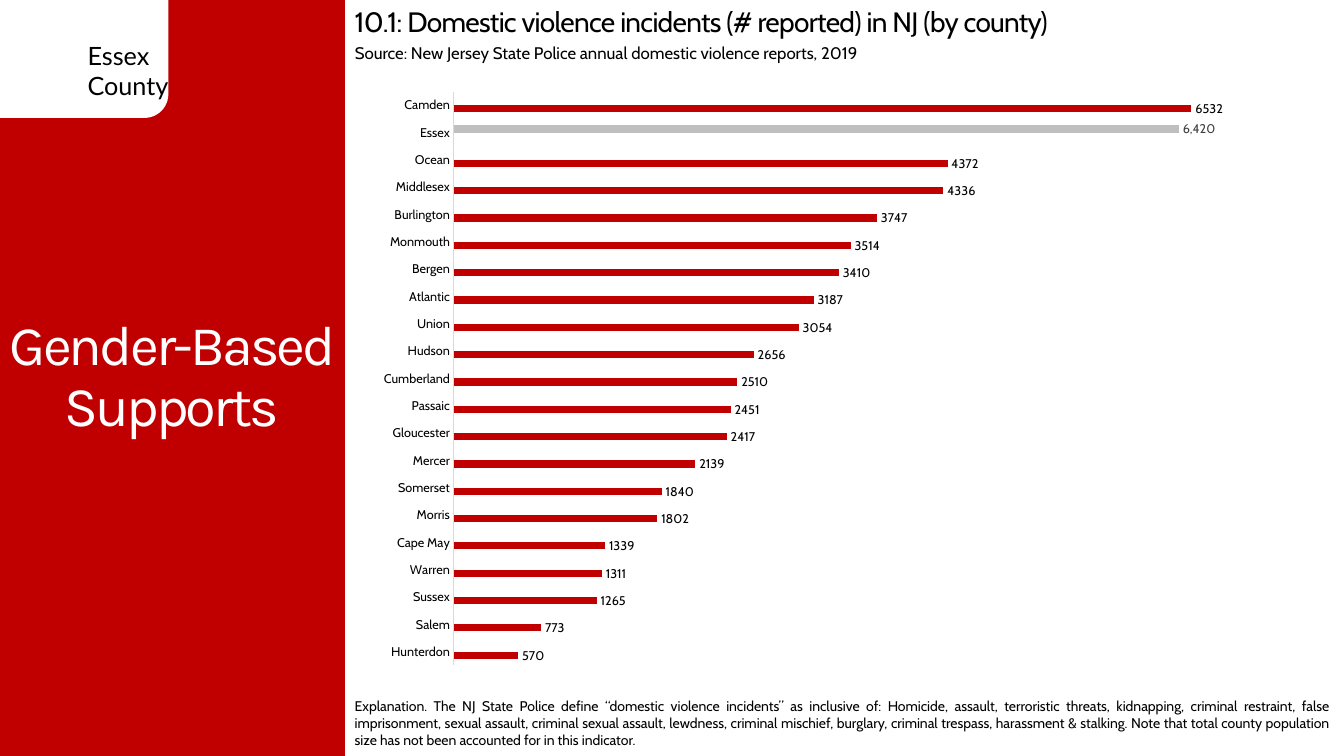
"""Build the Essex County slide on domestic violence incidents by county."""
from dataclasses import dataclass

from lxml import etree
from pptx import Presentation
from pptx.chart.data import CategoryChartData
from pptx.dml.color import RGBColor
from pptx.enum.chart import XL_CHART_TYPE, XL_LABEL_POSITION, XL_TICK_MARK
from pptx.enum.shapes import MSO_SHAPE
from pptx.enum.text import MSO_ANCHOR, PP_ALIGN
from pptx.oxml.ns import qn
from pptx.util import Inches, Pt

RECTANGLE, ROUNDED = MSO_SHAPE.RECTANGLE, MSO_SHAPE.ROUNDED_RECTANGLE
LEFT, CENTER, JUSTIFY = PP_ALIGN.LEFT, PP_ALIGN.CENTER, PP_ALIGN.JUSTIFY
TOP, MIDDLE = MSO_ANCHOR.TOP, MSO_ANCHOR.MIDDLE
BAR_CLUSTERED = XL_CHART_TYPE.BAR_CLUSTERED
OUTSIDE_END = XL_LABEL_POSITION.OUTSIDE_END
NO_TICK = XL_TICK_MARK.NONE


@dataclass(frozen=True)
class Theme:
    red: str = "C00000"
    white: str = "FFFFFF"
    black: str = "000000"
    silver: str = "BFBFBF"
    charcoal: str = "404040"
    axis_line: str = "D9D9D9"
    body_font: str = "Cabin"
    section_font: str = "Karla"
    county_font: str = "Lato"
    chart_font: str = "Calibri"
    section_size: int = 40
    title_size: int = 20
    county_size: int = 18
    source_size: int = 12
    note_size: int = 10
    label_size: int = 9


theme = Theme()


def style_font(font, name, size, color):
    font.name = name
    font.size = Pt(size)
    font.color.rgb = RGBColor.from_string(color)


def add_text(box, lines, name, size, color=theme.black, align=LEFT, anchor=TOP,
             spacing=0, wrap=True):
    shape = slide.shapes.add_textbox(*map(Inches, box))
    frame = shape.text_frame
    frame.word_wrap = wrap
    frame.vertical_anchor = anchor
    frame.text = "\n".join(lines)
    for paragraph in frame.paragraphs:
        paragraph.alignment = align
        style_font(paragraph.font, name, size, color)
        if spacing:
            for run in paragraph.runs:
                run._r.get_or_add_rPr().set("spc", str(spacing))
    return frame


presentation = Presentation()
presentation.slide_width = Inches(13.33)
presentation.slide_height = Inches(7.5)
slide = presentation.slides.add_slide(presentation.slide_layouts[6])

for preset, box, color in (
    (RECTANGLE, (0, 0, 3.42, 7.5), theme.red),
    (ROUNDED, (-0.33, -0.25, 2, 1.42), theme.white),
):
    panel = slide.shapes.add_shape(preset, *map(Inches, box))
    panel.shadow.inherit = False
    panel.fill.solid()
    panel.fill.fore_color.rgb = RGBColor.from_string(color)
    panel.line.fill.background()

add_text((0.77, 0.35, 1, 0.71), ["Essex", "County"], theme.county_font,
         theme.county_size, wrap=False)
section = add_text((-0.26, 0.75, 3.92, 6), ["Gender-Based Supports"],
                   theme.section_font, theme.section_size, theme.white,
                   CENTER, MIDDLE, spacing=-200)
section.paragraphs[0].line_spacing = 0.9
add_text((3.42, 0, 9.86, 0.44),
         ["10.1: Domestic violence incidents (# reported) in NJ (by county)"],
         theme.body_font, theme.title_size, spacing=-50)
add_text((3.42, 0.37, 9.19, 0.3),
         ["Source: New Jersey State Police annual domestic violence reports, 2019"],
         theme.body_font, theme.source_size)
add_text((3.42, 6.92, 9.86, 0.5), [
    "Explanation. The NJ State Police define “domestic violence incidents” as "
    "inclusive of: Homicide, assault, terroristic threats, kidnapping, criminal "
    "restraint, false imprisonment, sexual assault, criminal sexual assault, "
    "lewdness, criminal mischief, burglary, criminal trespass, harassment & "
    "stalking. Note that total county population size has not been accounted for "
    "in this indicator."
], theme.body_font, theme.note_size, align=JUSTIFY, anchor=MIDDLE)

incidents = {
    "Hunterdon": 570, "Salem": 773, "Sussex": 1265, "Warren": 1311,
    "Cape May": 1339, "Morris": 1802, "Somerset": 1840, "Mercer": 2139,
    "Gloucester": 2417, "Passaic": 2451, "Cumberland": 2510, "Hudson": 2656,
    "Union": 3054, "Atlantic": 3187, "Bergen": 3410, "Monmouth": 3514,
    "Burlington": 3747, "Middlesex": 4336, "Ocean": 4372, "Essex": 6420,
    "Camden": 6532,
}
highlight = "Essex"
chart_data = CategoryChartData()
chart_data.categories = list(incidents)
chart_data.add_series("Series 1", [
    None if county == highlight else count for county, count in incidents.items()])
chart_data.add_series("Series 2", [
    count if county == highlight else None for county, count in incidents.items()])
chart = slide.shapes.add_chart(
    BAR_CLUSTERED, Inches(3.63), Inches(0.79), Inches(8.89), Inches(5.93),
    chart_data).chart
chart.has_title = False
chart.has_legend = False
style_font(chart.font, theme.chart_font, theme.note_size, theme.black)

category_axis = chart.category_axis
category_axis.major_tick_mark = NO_TICK
category_axis.minor_tick_mark = NO_TICK
category_axis.has_major_gridlines = False
category_axis.format.line.color.rgb = RGBColor.from_string(theme.axis_line)
category_axis.format.line.width = Pt(0.75)
style_font(category_axis.tick_labels.font, theme.body_font, theme.label_size,
           theme.black)
value_axis = chart.value_axis
value_axis.visible = False
value_axis.has_major_gridlines = False
value_axis.minimum_scale = 0
value_axis.maximum_scale = 7000

plot = chart.plots[0]
plot.gap_width = 182
plot.overlap = 0
plot.vary_by_categories = False
for series, fill, label_color, number_format in zip(
    plot.series, (theme.red, theme.silver), (theme.black, theme.charcoal),
    ("General", "#,##0"),
):
    series.invert_if_negative = False
    series.format.fill.solid()
    series.format.fill.fore_color.rgb = RGBColor.from_string(fill)
    labels = series.data_labels
    labels.show_value = True
    labels.number_format = number_format
    labels.number_format_is_linked = False
    labels.position = OUTSIDE_END
    style_font(labels.font, theme.body_font, theme.label_size, label_color)

plot_area = chart._chartSpace.chart.plotArea
for old_layout in plot_area.findall(qn("c:layout")):
    plot_area.remove(old_layout)
layout = etree.Element(qn("c:layout"))
plot_area.insert(0, layout)
manual = etree.SubElement(layout, qn("c:manualLayout"))
for tag, value in (
    ("layoutTarget", "inner"), ("xMode", "edge"), ("yMode", "edge"),
    ("x", "0.098"), ("y", "0.02"), ("w", "0.882"), ("h", "0.96"),
):
    etree.SubElement(manual, qn(f"c:{tag}")).set("val", value)

presentation.save("out.pptx")
